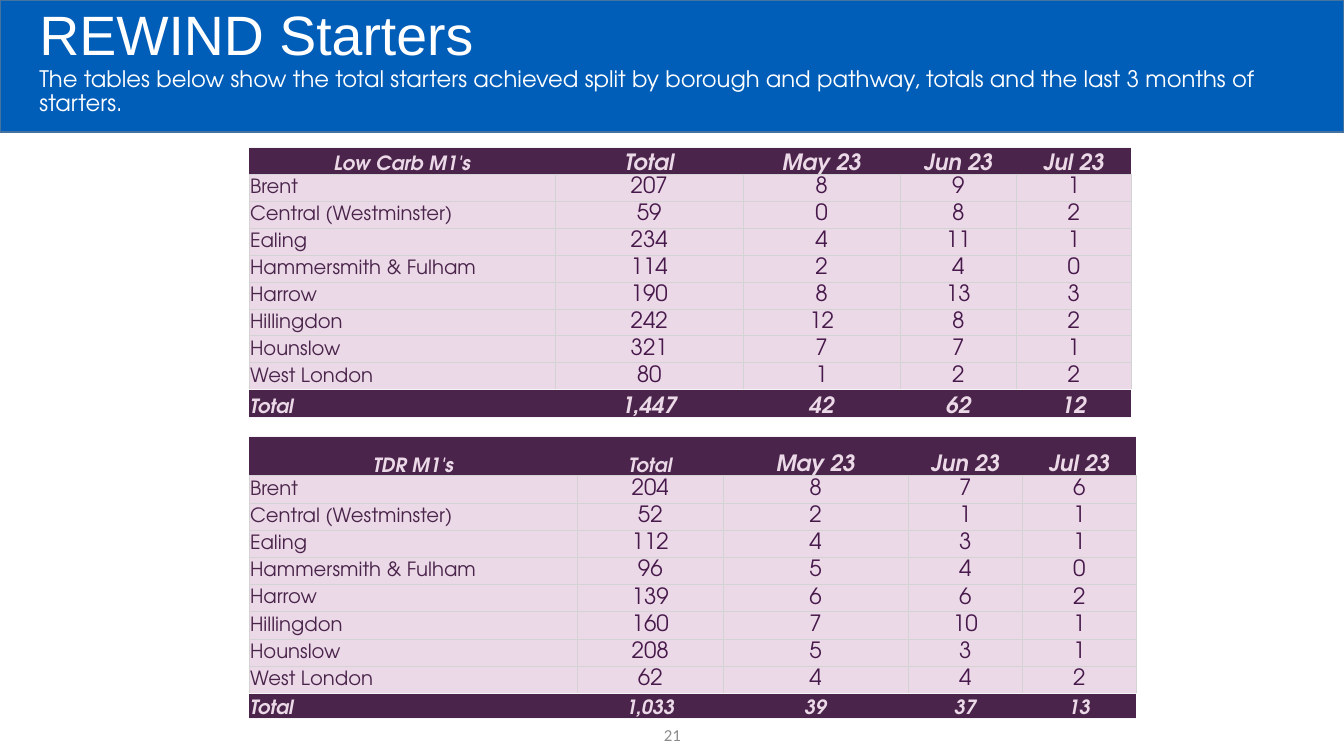
from lxml import etree
from pptx import Presentation
from pptx import util as u
from pptx.dml.color import RGBColor
from pptx.enum import shapes, text
from pptx.oxml.ns import qn

PX = 9144  # 100 px to the inch
FONT = "TeX Gyre Adventor"
DARK, PALE, INK = "4A244A", "EBD9E8", "47194B"
GREY, LIGHT = "D3D3D3", "F5F5F5"
MID, LOW = text.MSO_ANCHOR.MIDDLE, text.MSO_ANCHOR.BOTTOM
LEFT, CENTER = text.PP_ALIGN.LEFT, text.PP_ALIGN.CENTER

AREAS = ["Brent", "Central (Westminster)", "Ealing", "Hammersmith & Fulham",
         "Harrow", "Hillingdon", "Hounslow", "West London", "Total"]
MONTHS = ["Total", "May 23", "Jun 23", "Jul 23"]
CARB = [(207, 8, 9, 1), (59, 0, 8, 2), (234, 4, 11, 1), (114, 2, 4, 0),
        (190, 8, 13, 3), (242, 12, 8, 2), (321, 7, 7, 1), (80, 1, 2, 2),
        (1447, 42, 62, 12)]
TDR = [(204, 8, 7, 6), (52, 2, 1, 1), (112, 4, 3, 1), (96, 5, 4, 0),
       (139, 6, 6, 2), (160, 7, 10, 1), (208, 5, 3, 1), (62, 4, 4, 2),
       (1033, 39, 37, 13)]


def px(*nums):
    return [u.Emu(n * PX) for n in nums]


def color(code):
    return RGBColor.from_string(code)


def put(para, words, size=14, font=FONT, ink=DARK, strong=False, align=LEFT):
    """Add a formatted run to a paragraph."""
    para.alignment = align
    run = para.add_run()
    run.text = words
    face = run.font
    face.size, face.name = u.Pt(size), font
    face.bold = face.italic = strong
    face.color.rgb = color(ink)


def border(cell, **sides):
    """Draw cell edges by side; None means no line."""
    props = cell._tc.get_or_add_tcPr()
    for side in "LRTB":
        line = etree.SubElement(props, qn("a:ln" + side), w=str(u.Pt(0.5)))
        if sides[side]:
            fill = etree.SubElement(line, qn("a:solidFill"))
            etree.SubElement(fill, qn("a:srgbClr"), val=sides[side])
        else:
            etree.SubElement(line, qn("a:noFill"))


def band(slide):
    """Blue band behind the title."""
    rect = slide.shapes.add_shape(shapes.MSO_SHAPE.RECTANGLE, *px(0, 0, 1333, 131))
    rect.shadow.inherit = False
    rect.fill.solid()
    rect.fill.fore_color.rgb = color("005EB8")
    rect.line.color.rgb = color("43739E")
    rect.line.width = u.Pt(1)
    slide.shapes._spTree.insert(2, rect._element)


def heading(slide, name, note):
    """Title with its note on the next line."""
    title = slide.shapes.title
    title.left, title.top, title.width, title.height = px(29, 44, 1244, 59)
    frame = title.text_frame
    frame.word_wrap = True
    frame.auto_size = text.MSO_AUTO_SIZE.NONE
    frame.vertical_anchor = MID
    frame.margin_left, frame.margin_right, frame.margin_top, frame.margin_bottom = px(10, 10, 5, 29)
    para = frame.paragraphs[0]
    para.line_spacing = 0.9
    put(para, name, size=39.6, font="Arial", ink="FFFFFF")
    para.add_line_break()
    put(para, note, size=16.2, ink="FFFFFF")


def number(slide, words):
    """Page number."""
    frame = slide.shapes.add_textbox(*px(517, 709, 300, 40)).text_frame
    frame.word_wrap = True
    frame.vertical_anchor = MID
    put(frame.paragraphs[0], words, size=12, font="Calibri", ink="8C8C8C", align=CENTER)


def grid(slide, top, name, data, cols, rows, small):
    """Starters by borough; small lists the cells of strong rows set at 14 pt."""
    rect = px(247, top, sum(cols), sum(rows))
    table = slide.shapes.add_table(len(rows), len(cols), *rect).table
    for col, wide in zip(table.columns, px(*cols)):
        col.width = wide
    for row, high in zip(table.rows, px(*rows)):
        row.height = high
    lines = [[name, *MONTHS]]
    lines += [[area, *(f"{n:,}" for n in nums)] for area, nums in zip(AREAS, data)]
    last = len(lines) - 1
    for r, line in enumerate(lines):
        strong = r in (0, last)
        for c, words in enumerate(line):
            cell = table.cell(r, c)
            side = None if strong else GREY
            border(cell, L=side, R=side, T=LIGHT if strong else GREY,
                   B=LIGHT if r >= last - 1 else GREY)
            cell.fill.solid()
            cell.fill.fore_color.rgb = color(DARK if strong else PALE)
            cell.vertical_anchor = LOW if strong else MID
            pad = 1 if c == 0 or r == last else 0
            cell.margin_left, cell.margin_right, cell.margin_top, cell.margin_bottom = px(pad, pad, pad, 0)
            put(cell.text_frame.paragraphs[0], words,
                size=14 if c == 0 or (r, c) in small else 16,
                ink=PALE if strong else INK if c else DARK,
                strong=strong, align=CENTER if c or r == 0 else LEFT)


def main():
    deck = Presentation()
    deck.slide_width, deck.slide_height = px(1333, 750)
    slide = deck.slides.add_slide(deck.slide_layouts[5])
    band(slide)
    number(slide, "21")
    heading(slide, "REWIND Starters",
            "The tables below show the total starters achieved split by borough "
            "and pathway, totals and the last 3 months of starters.")
    grid(slide, 146, "Low Carb M1's", CARB, [304, 186, 156, 115, 114],
         [27] + [26] * 8 + [27], [])
    grid(slide, 433, "TDR M1's", TDR, [326, 144, 184, 113, 113],
         [39] + [27] * 8 + [25], [(0, 1)] + [(9, c) for c in range(1, 5)])
    deck.save("out.pptx")


if __name__ == "__main__":
    main()
